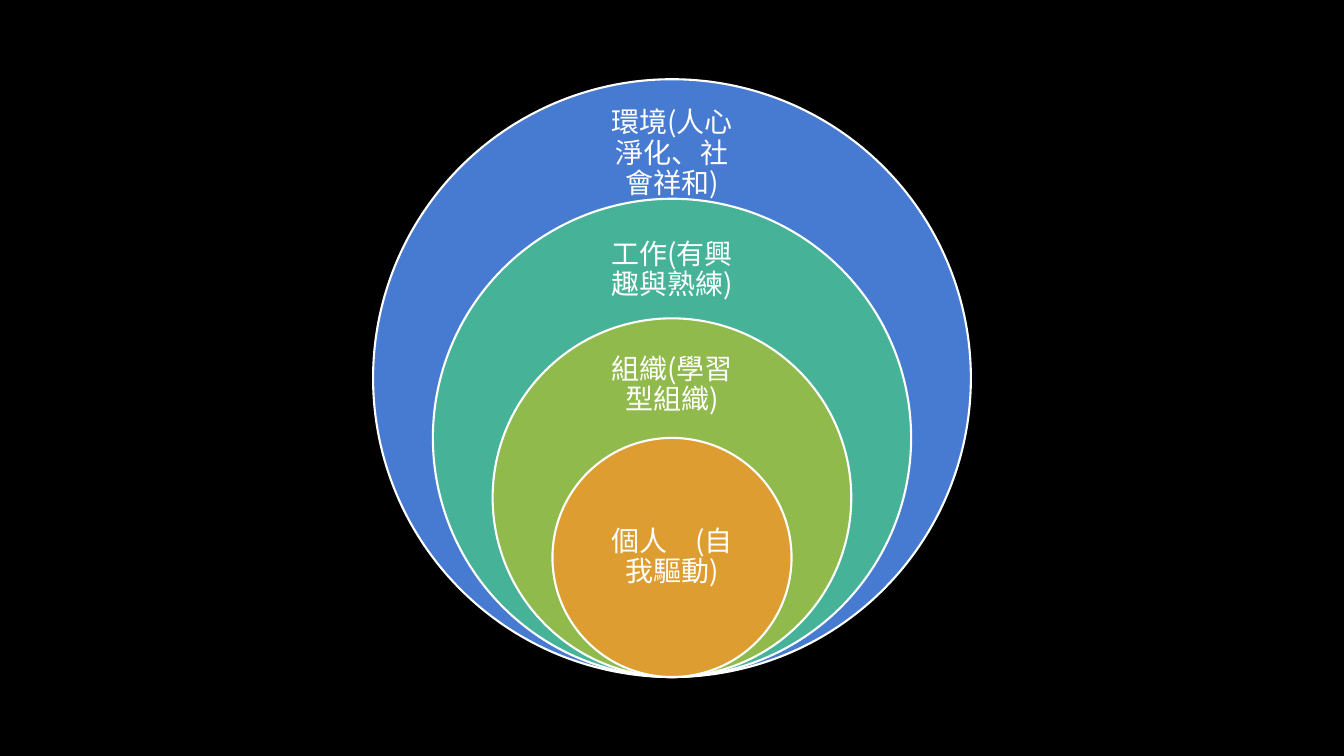
from lxml.etree import SubElement
from pptx import Presentation
from pptx.dml.color import RGBColor
from pptx.enum.shapes import MSO_SHAPE as Shape
from pptx.enum.text import MSO_ANCHOR as Anchor, PP_ALIGN as Align
from pptx.oxml.ns import qn
from pptx.util import Pt

FONT = "Noto Sans CJK SC"
WHITE = "FFFFFF"

# Each level: wording, colour, caption top and height as shares of the diameter
LEVELS = [
    ("環境(人心淨化、社會祥和)", "477BD1", 0.05, 0.15),
    ("工作(有興趣與熟練)", "46B298", 0.06, 0.18),
    ("組織(學習型組織)", "90BA4C", 0.075, 0.225),
    ("個人　(自我驅動)", "DD9D31", 0.25, 0.5),
]


def paint(color_format, color):
    color_format.rgb = RGBColor.from_string(color)


def add_caption(slide, text, left, top, width, height, *,
                size=20, color=WHITE, font=FONT, inset=11.4):
    frame = slide.shapes.add_textbox(Pt(left), Pt(top), Pt(width), Pt(height)).text_frame
    frame.word_wrap = True
    frame.vertical_anchor = Anchor.MIDDLE
    frame.margin_left = frame.margin_right = Pt(inset)
    frame.margin_top = frame.margin_bottom = Pt(inset)
    paragraph = frame.paragraphs[0]
    paragraph.alignment = Align.CENTER
    paragraph.line_spacing = 0.9
    run = paragraph.add_run()
    run.text = text
    run.font.size = Pt(size)
    run.font.name = font
    paint(run.font.color, color)
    SubElement(run.font._element, qn("a:ea"), typeface=font)


def add_circle(slide, left, top, diameter, color):
    circle = slide.shapes.add_shape(
        Shape.OVAL, Pt(left), Pt(top), Pt(diameter), Pt(diameter))
    circle.shadow.inherit = False
    circle.fill.solid()
    paint(circle.fill.fore_color, color)
    paint(circle.line.color, WHITE)
    circle.line.width = Pt(1.5)


def add_nested_circles(slide, left, top, size, caption_width=120):
    """Circles shrink by a fifth of the size and share their lowest point."""
    center, bottom = left + size / 2, top + size
    for index, (text, color, offset, share) in enumerate(LEVELS):
        diameter = size * (1 - index / 5)
        circle_top = bottom - diameter
        add_circle(slide, center - diameter / 2, circle_top, diameter, color)
        add_caption(slide, text, center - caption_width / 2,
                    circle_top + offset * diameter, caption_width, share * diameter)


def main():
    deck = Presentation()
    deck.slide_width, deck.slide_height = Pt(960), Pt(540)
    slide = deck.slides.add_slide(deck.slide_layouts[6])

    # Black background
    slide.background.fill.solid()
    paint(slide.background.fill.fore_color, "000000")

    # Levels from environment down to individual
    add_nested_circles(slide, left=266.5, top=56.6, size=427)
    deck.save("out.pptx")


if __name__ == "__main__":
    main()
